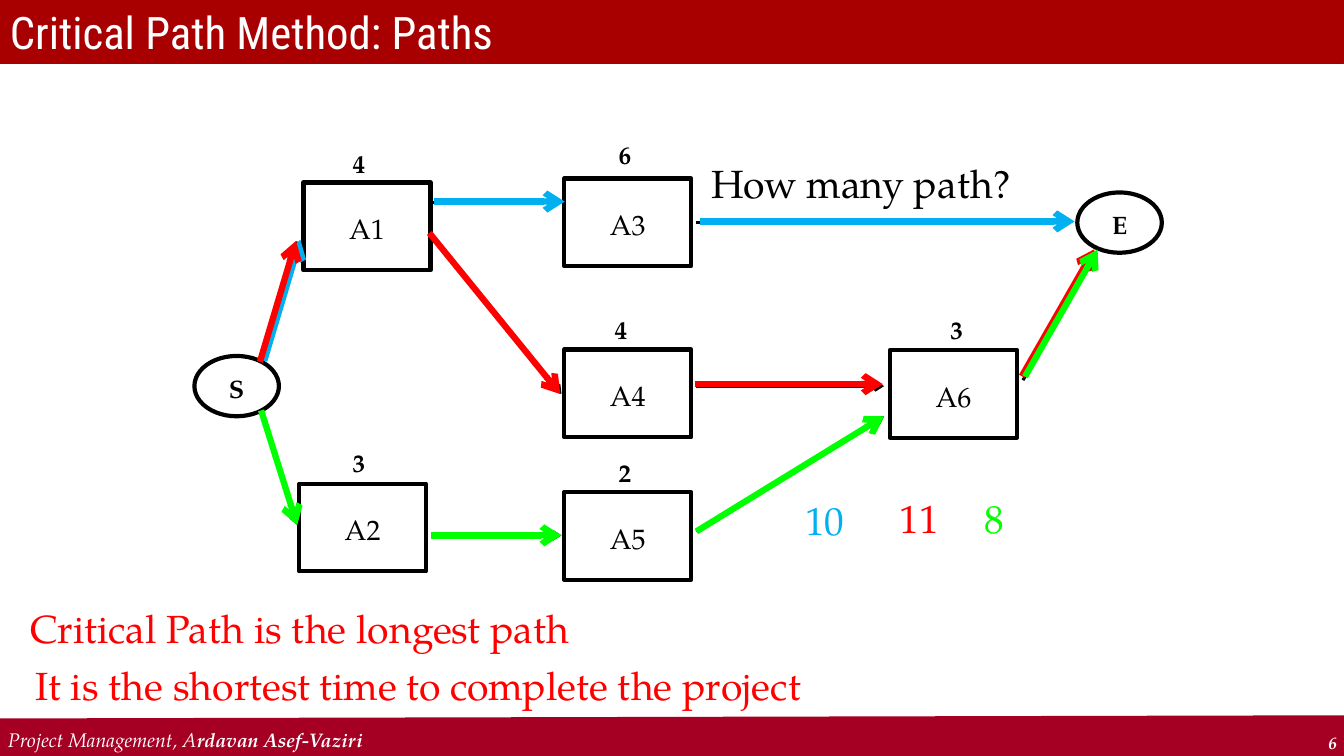
from dataclasses import dataclass

from lxml.etree import SubElement
from pptx import Presentation
from pptx.dml.color import RGBColor
from pptx.enum.shapes import MSO_CONNECTOR, MSO_SHAPE
from pptx.enum.text import MSO_ANCHOR, PP_ALIGN
from pptx.oxml.ns import qn
from pptx.util import Cm, Pt


@dataclass(frozen=True)
class Theme:
    title_font: str = "Roboto Condensed"
    body_font: str = "TeX Gyre Pagella"
    white: str = "FFFFFF"
    black: str = "000000"
    header: str = "A80000"
    footer: str = "A50023"
    blue: str = "00B0F0"
    red: str = "FF0000"
    green: str = "00FF00"
    title_size: float = 32
    statement_size: float = 28
    activity_size: float = 20
    label_size: float = 18
    footer_size: float = 14
    number_size: float = 12
    header_line: float = 0.75
    arrow_line: float = 2.25
    node_line: float = 3
    path_line: float = 4.5
    footer_line: float = 29.25


THEME = Theme()
SLIDE_SIZE = (33.87, 19.05)

# Node name: left, top, and for activities the duration with its place
ACTIVITY_SIZE = (3.2, 2.21)
ACTIVITIES = {
    "A1": (7.65, 4.6, "4", 8.64, 3.61),
    "A2": (7.54, 12.19, "3", 8.64, 11.15),
    "A3": (14.22, 4.5, "6", 15.34, 3.38),
    "A4": (14.22, 8.81, "4", 15.24, 7.8),
    "A5": (14.22, 12.4, "2", 15.34, 11.4),
    "A6": (22.43, 8.82, "3", 23.7, 7.8),
}
EVENT_SIZE = (2.13, 1.52)
EVENTS = {"S": (4.9, 8.97), "E": (27.15, 4.85)}
DURATION_SIZE = (0.84, 1.02)

# Arrow: start x, start y, end x, end y
ARROWS = {
    "S-A1": (6.58, 9.12, 7.49, 6.07),
    "S-A2": (6.58, 10.34, 7.49, 13.23),
    "A1-A3": (10.85, 5.11, 14.15, 5.11),
    "A1-A4": (10.85, 5.87, 14.15, 9.93),
    "A2-A5": (10.85, 13.49, 14.15, 13.49),
    "A3-E": (17.55, 5.61, 27, 5.61),
    "A4-A6": (17.55, 9.73, 22.28, 9.73),
    "A5-A6": (17.55, 13.39, 22.28, 10.49),
    "A6-E": (25.78, 9.58, 27.61, 6.38),
}

# Each path: colour, and the shift of its arrows from the network arrows
PATHS = [
    (THEME.blue, {edge: (0.08, -0.03) for edge in ("A1-A3", "A3-E", "S-A1")}),
    (THEME.red, {"A6-E": (-0.03, -0.1), "A1-A4": (-0.03, 0),
                 "A4-A6": (-0.03, -0.05), "S-A1": (-0.03, 0)}),
    (THEME.green, {"A6-E": (0.05, -0.09), "A2-A5": (0, 0),
                   "A5-A6": (0, 0), "S-A2": (0, 0)}),
]

# Statement: text, colour, left, top, width
STATEMENTS = [
    ("How many path?", THEME.black, 17.68, 3.89, 9.96),
    ("10", THEME.blue, 20.04, 12.37, 2.59),
    ("11", THEME.red, 22.43, 12.32, 2.59),
    ("8", THEME.green, 24.56, 12.32, 2.59),
    ("Critical Path is the longest path", THEME.red, 0.51, 15.11, 20.78),
    ("It is the shortest time to complete the project", THEME.red, 0.64, 16.54, 23.7),
]
STATEMENT_HEIGHT = 1.45


def lengths(values):
    return [Cm(value) for value in values]


def write(shape, runs, size, color=THEME.black, font=THEME.body_font,
          align=PP_ALIGN.LEFT, **frame_format):
    """Fill a shape with one paragraph; runs are (text, font format) pairs."""
    frame = shape.text_frame
    for name, value in ({"word_wrap": True} | frame_format).items():
        setattr(frame, name, value)
    paragraph = frame.paragraphs[0]
    paragraph.alignment = align
    for text, font_format in runs:
        run = paragraph.add_run()
        run.text = text
        values = {"name": font, "size": Pt(size)} | font_format
        for name, value in values.items():
            setattr(run.font, name, value)
        run.font.color.rgb = RGBColor.from_string(color)


def add_text(slide, box, runs, size, **options):
    write(slide.shapes.add_textbox(*lengths(box)), runs, size, **options)


def add_outline(slide, kind, box, color, width, fill=None):
    shape = slide.shapes.add_shape(kind, *lengths(box))
    shape.shadow.inherit = False
    if fill:
        shape.fill.solid()
        shape.fill.fore_color.rgb = RGBColor.from_string(fill)
    else:
        shape.fill.background()
    shape.line.color.rgb = RGBColor.from_string(color)
    shape.line.width = Pt(width)
    return shape


def add_line(shapes, ends, color, width, arrow=True):
    connector = shapes.add_connector(MSO_CONNECTOR.STRAIGHT, *lengths(ends))
    connector.line.color.rgb = RGBColor.from_string(color)
    connector.line.width = Pt(width)
    if arrow:
        SubElement(connector.line._get_or_add_ln(), qn("a:tailEnd"), type="arrow")
    SubElement(connector._element.spPr, qn("a:effectLst"))


def add_header(slide, box):
    add_outline(slide, MSO_SHAPE.RECTANGLE, box, THEME.header,
                THEME.header_line, THEME.header)
    add_text(slide, box, [("Critical Path Method: Paths", {})], THEME.title_size,
             color=THEME.white, font=THEME.title_font,
             vertical_anchor=MSO_ANCHOR.MIDDLE)


def add_footer(slide, box):
    left, top, width, height = box
    add_line(slide.shapes, (left, top + 0.43, left + width, top + 0.35),
             THEME.footer, THEME.footer_line, arrow=False)
    add_text(slide, (left + width - 2.5, top + 0.15, 2.54, 0.76),
             [("6", {"bold": True, "italic": True})], THEME.number_size,
             color=THEME.white, align=PP_ALIGN.RIGHT)
    add_text(slide, (left - 0.02, top, 26.54, height),
             [("Project Management, A", {"italic": True}),
              ("rdavan Asef-Vaziri", {"italic": True, "bold": True})],
             THEME.footer_size, color=THEME.white,
             vertical_anchor=MSO_ANCHOR.BOTTOM)


def add_node(slide, kind, box, name, size, bold):
    shape = add_outline(slide, kind, box, THEME.black, THEME.node_line)
    write(shape, [(name, {"bold": bold})], size, align=PP_ALIGN.CENTER,
          vertical_anchor=MSO_ANCHOR.MIDDLE, margin_left=0, margin_right=0,
          margin_top=Cm(0.1), margin_bottom=0)


def add_network(slide, left, top):
    """Draw nodes, durations and arrows from the given corner."""
    for ends in ARROWS.values():
        x1, y1, x2, y2 = ends
        add_line(slide.shapes, (left + x1, top + y1, left + x2, top + y2),
                 THEME.black, THEME.arrow_line)
    for name, (x, y, duration, label_x, label_y) in ACTIVITIES.items():
        add_node(slide, MSO_SHAPE.RECTANGLE, (left + x, top + y, *ACTIVITY_SIZE),
                 name, THEME.activity_size, False)
        add_text(slide, (left + label_x, top + label_y, *DURATION_SIZE),
                 [(duration, {"bold": True})], THEME.label_size, word_wrap=False)
    for name, (x, y) in EVENTS.items():
        add_node(slide, MSO_SHAPE.OVAL, (left + x, top + y, *EVENT_SIZE),
                 name, THEME.label_size, True)


def add_paths(slide, left, top):
    """Lay each coloured path over the network as one group."""
    for color, shifts in PATHS:
        group = slide.shapes.add_group_shape()
        for edge, (dx, dy) in shifts.items():
            x1, y1, x2, y2 = ARROWS[edge]
            add_line(group.shapes, (left + x1 + dx, top + y1 + dy,
                                    left + x2 + dx, top + y2 + dy),
                     color, THEME.path_line)


def add_statements(slide, left, top):
    for text, color, x, y, width in STATEMENTS:
        add_text(slide, (left + x, top + y, width, STATEMENT_HEIGHT),
                 [(text, {})], THEME.statement_size, color=color)


def main():
    presentation = Presentation()
    presentation.slide_width, presentation.slide_height = lengths(SLIDE_SIZE)
    slide = presentation.slides.add_slide(presentation.slide_layouts[6])
    width, height = SLIDE_SIZE
    add_footer(slide, (-0.03, height - 0.86, width + 0.06, 0.86))
    add_header(slide, (0, 0, width, 1.6))
    add_network(slide, 0, 0)
    add_paths(slide, 0, 0)
    add_statements(slide, 0, 0)
    presentation.save("out.pptx")


if __name__ == "__main__":
    main()
